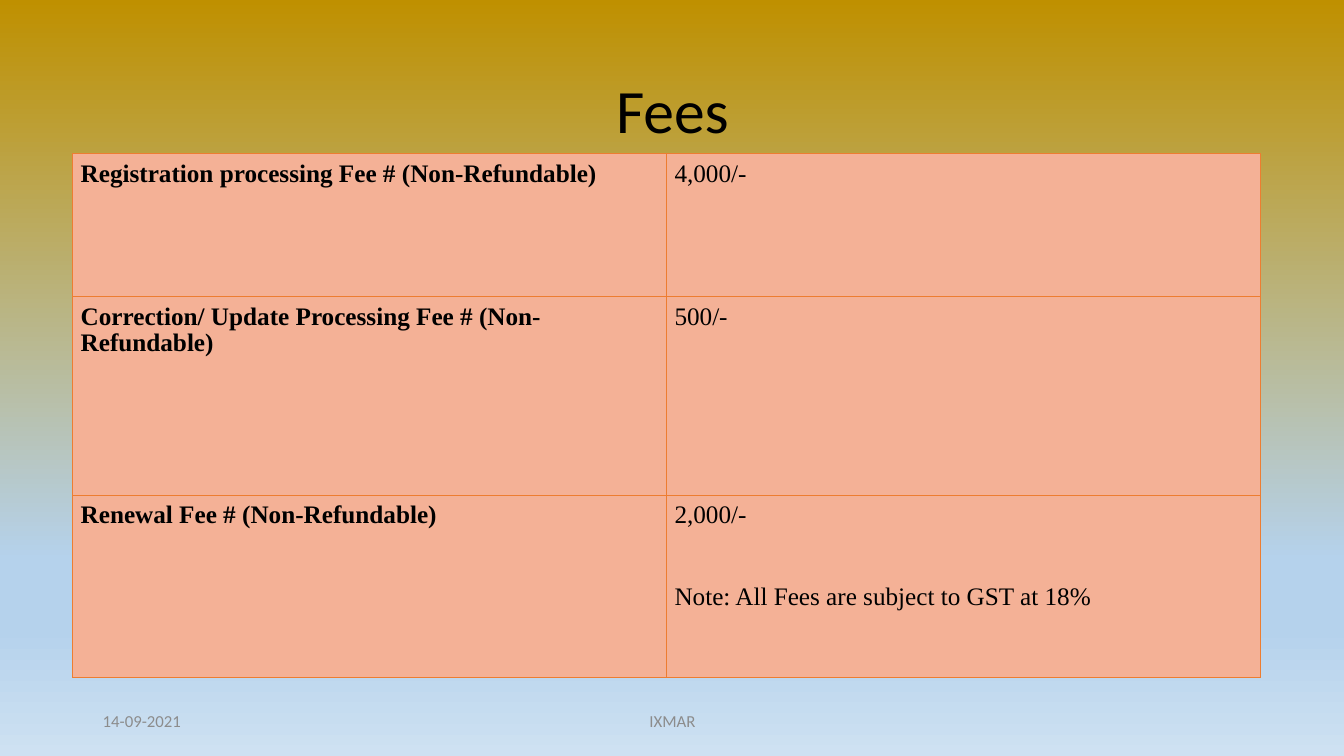
from typing import NamedTuple

from lxml import etree
from pptx import Presentation
from pptx.dml.color import RGBColor
from pptx.enum.text import MSO_ANCHOR, PP_ALIGN
from pptx.oxml.ns import qn
from pptx.util import Inches, Pt

MIDDLE = MSO_ANCHOR.MIDDLE
LEFT, CENTER = PP_ALIGN.LEFT, PP_ALIGN.CENTER
SANS, SERIF = "Calibri", "Times New Roman"
BLACK, GREY, PEACH, ORANGE = "000000", "8C8C8C", "F4B196", "ED7D31"
STOPS = [(0, "BF9000"), (74, "B5D2EC"), (83, "B5D2EC"), (100, "CEE1F2")]


class Fee(NamedTuple):
    label: str
    price: str
    height: float
    note: str = ""


class Foot(NamedTuple):
    text: str
    left: float
    width: float
    align: PP_ALIGN


FEES = [
    Fee("Registration processing Fee # (Non-Refundable)", "4,000/-", 1.42),
    Fee("Correction/ Update Processing Fee # (Non-Refundable)", "500/-", 1.97),
    Fee("Renewal Fee # (Non-Refundable)", "2,000/-", 1.81,
        "Note: All Fees are subject to GST at 18%"),
]
FEET = [Foot("14-09-2021", 0.92, 3, LEFT), Foot("IXMAR", 4.42, 4.5, CENTER)]


def color(code: str) -> RGBColor:
    return RGBColor.from_string(code)


def style(para, face: str, size: float, code: str, bold: bool = False) -> None:
    font = para.font
    font.name, font.size, font.bold = face, Pt(size), bold
    font.color.rgb = color(code)


def place(shape, left: float, top: float, width: float, height: float) -> None:
    shape.left, shape.top = Inches(left), Inches(top)
    shape.width, shape.height = Inches(width), Inches(height)


def add_hex(parent, code: str) -> None:
    etree.SubElement(parent, qn("a:srgbClr"), val=code)


def paint_back(slide) -> None:
    fill = slide.background.fill
    fill.gradient()
    fill.gradient_angle = 270
    stops = next(slide.element.iter(qn("a:gsLst")))
    for old in list(stops):
        stops.remove(old)
    for spot, code in STOPS:
        add_hex(etree.SubElement(stops, qn("a:gs"), pos=str(spot * 1000)), code)


def add_edges(cell, code: str, width: float) -> None:
    props = cell._tc.get_or_add_tcPr()
    for index, side in enumerate(("lnL", "lnR", "lnT", "lnB")):
        line = etree.Element(qn(f"a:{side}"), w=str(Pt(width)))
        add_hex(etree.SubElement(line, qn("a:solidFill")), code)
        props.insert(index, line)


def fill_cell(cell, lines: list[str], bold: bool) -> None:
    cell.fill.solid()
    cell.fill.fore_color.rgb = color(PEACH)
    add_edges(cell, ORANGE, 0.5)
    cell.margin_left = cell.margin_right = Inches(0.08)
    cell.margin_top = cell.margin_bottom = Inches(0.08)
    cell.text = "\n".join(lines)
    for para in cell.text_frame.paragraphs:
        style(para, SERIF, 18, BLACK, bold)
        para.line_spacing = 0.93
    for para in cell.text_frame.paragraphs[1:]:
        para.space_before = Pt(40)


def add_title(slide, text: str) -> None:
    title = slide.shapes.title
    place(title, 0.92, 0.4, 11.5, 1.45)
    title.text_frame.text = text
    title.text_frame.vertical_anchor = MIDDLE
    para = title.text_frame.paragraphs[0]
    para.alignment, para.line_spacing = CENTER, 0.9
    style(para, SANS, 44, BLACK)


def add_fees(slide, fees: list[Fee]) -> None:
    table = slide.shapes.add_table(
        len(fees), 2, Inches(0.72), Inches(1.52), Inches(11.78), Inches(5.2)
    ).table
    table.first_row = table.horz_banding = False
    for row, fee in zip(table.rows, fees):
        row.height = Inches(fee.height)
        fill_cell(row.cells[0], [fee.label], True)
        fill_cell(row.cells[1], [fee.price] + [fee.note] * bool(fee.note), False)


def add_foot(slide, foot: Foot) -> None:
    box = slide.shapes.add_textbox(
        Inches(foot.left), Inches(6.95), Inches(foot.width), Inches(0.4))
    frame = box.text_frame
    frame.word_wrap, frame.vertical_anchor = True, MIDDLE
    frame.text = foot.text
    para = frame.paragraphs[0]
    para.alignment = foot.align
    style(para, SANS, 12, GREY)


def main() -> None:
    deck = Presentation()
    deck.slide_width, deck.slide_height = Inches(13.33), Inches(7.5)
    slide = deck.slides.add_slide(deck.slide_layouts[5])
    paint_back(slide)
    add_title(slide, "Fees")
    add_fees(slide, FEES)
    for foot in FEET:
        add_foot(slide, foot)
    deck.save("out.pptx")


if __name__ == "__main__":
    main()
